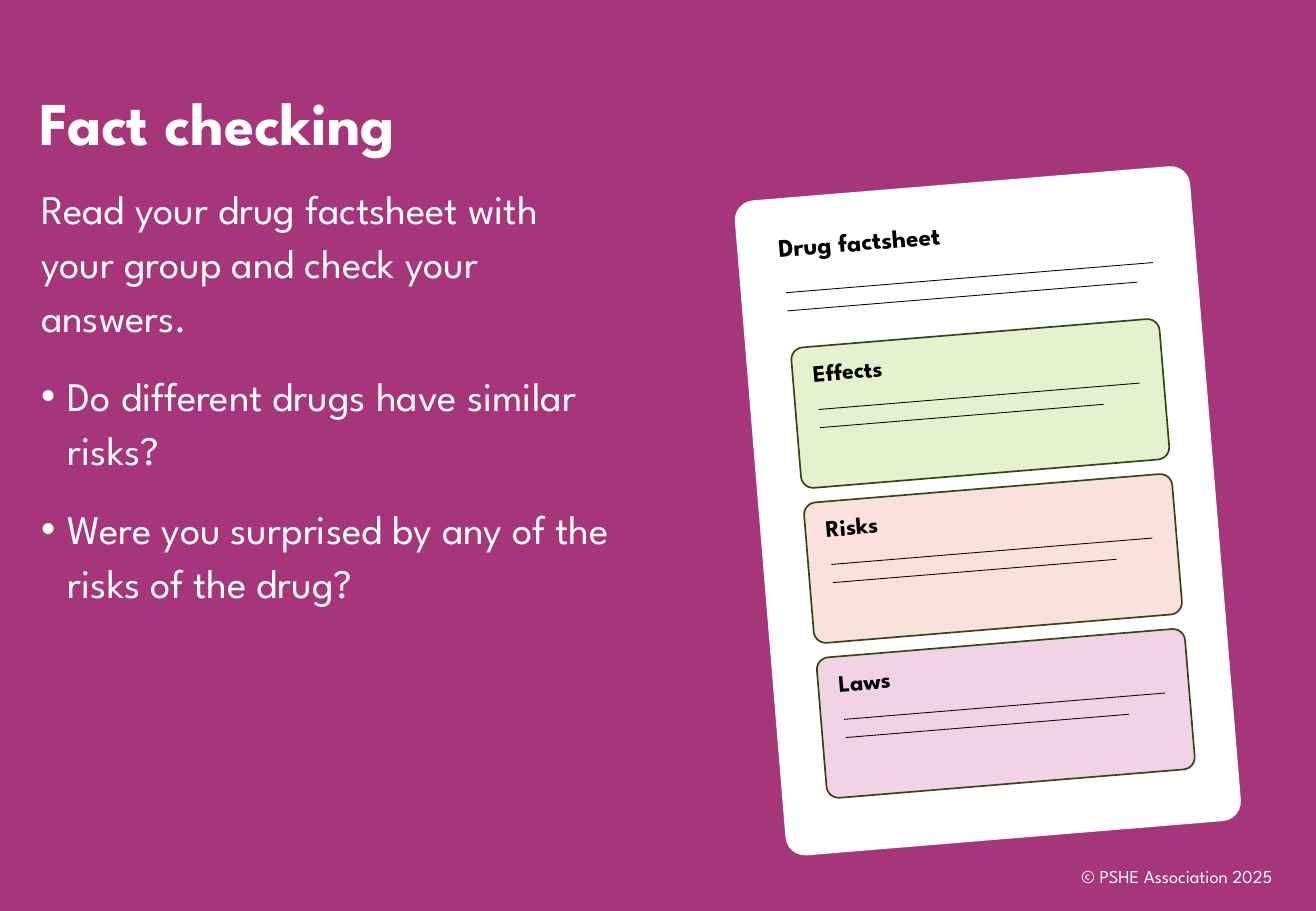
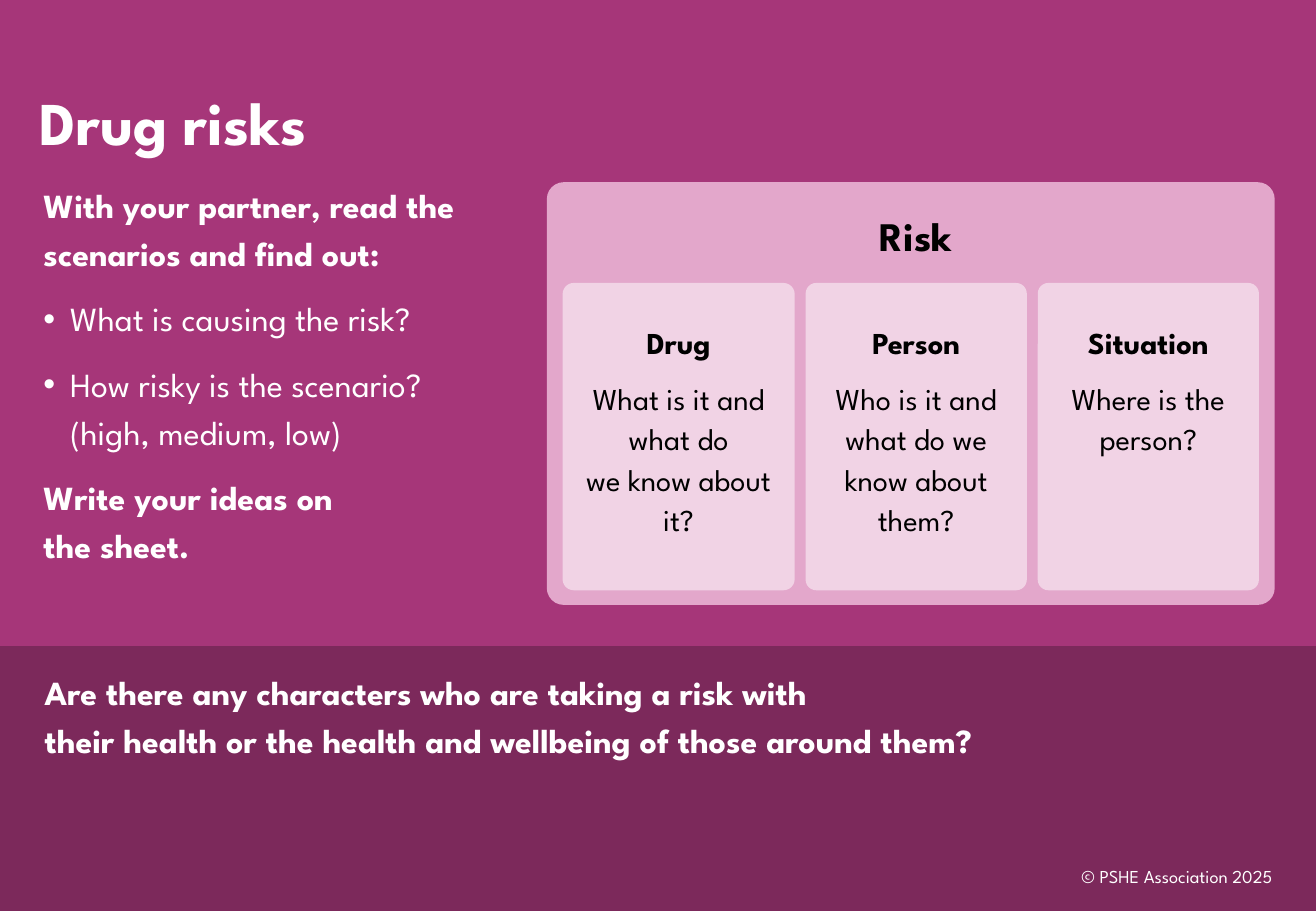
import math

import pptx
import pptx.dml.color
import pptx.enum.shapes
import pptx.enum.text
import pptx.util
from lxml import etree
from pptx.oxml.ns import qn

Inches = pptx.util.Inches
Pt = pptx.util.Pt
ALIGN = pptx.enum.text.PP_ALIGN
ANCHOR = pptx.enum.text.MSO_ANCHOR
SHAPE = pptx.enum.shapes.MSO_SHAPE

FONT = "League Spartan"
COLOURS = {
    "background": "A63679",
    "band": "7C295B",
    "panel": "E3A7CB",
    "pink": "F1D3E5",
    "green": "E7F1CF",
    "peach": "FBE1DB",
    "outline": "354413",
    "white": "FFFFFF",
    "black": "000000",
}
SLIDE_WIDTH, SLIDE_HEIGHT = 10.83, 7.5
SHEET_TILT = -4.7
BULLET_INDENT = 0.22


def colour(name):
    return pptx.dml.color.RGBColor.from_string(COLOURS[name])


def write(frame, text, *, size, color="white", bold=False, align=ALIGN.LEFT,
          line=None, before=0, bullet=False):
    """Add one paragraph; the first one fills the paragraph the frame starts with."""
    first = not frame.text
    paragraph = frame.paragraphs[0] if first else frame.add_paragraph()
    paragraph.text = text
    paragraph.alignment = align
    if bullet:
        properties = paragraph._p.get_or_add_pPr()
        properties.set("marL", str(Inches(BULLET_INDENT)))
        properties.set("indent", str(-Inches(BULLET_INDENT)))
        etree.SubElement(properties, qn("a:buFont")).set("typeface", "Arial")
        etree.SubElement(properties, qn("a:buChar")).set("char", "•")
    if line:
        paragraph.line_spacing = Pt(line)
    if before and not first:
        paragraph.space_before = Pt(before)
    for run in paragraph.runs:
        run.font.name = FONT
        run.font.size = Pt(size)
        run.font.bold = bold
        run.font.color.rgb = colour(color)


def set_frame(shape, anchor=ANCHOR.TOP, insets=(0.1, 0.05, 0.1, 0.05)):
    frame = shape.text_frame
    frame.word_wrap = True
    frame.vertical_anchor = anchor
    (frame.margin_left, frame.margin_top,
     frame.margin_right, frame.margin_bottom) = map(Inches, insets)
    return frame


def add_text_box(shapes, left, top, width, height, anchor=ANCHOR.TOP):
    return shapes.add_textbox(*map(Inches, (left, top, width, height))), anchor


def text_frame(shapes, box, anchor=ANCHOR.TOP):
    """Add a text box and return its frame."""
    return set_frame(shapes.add_textbox(*map(Inches, box)), anchor)


def add_box(shapes, box, fill, *, corner=None, outline=None):
    """Add a filled rectangle, rounded when a corner ratio is given."""
    preset = SHAPE.RECTANGLE if corner is None else SHAPE.ROUNDED_RECTANGLE
    shape = shapes.add_shape(preset, *map(Inches, box))
    shape.shadow.inherit = False
    if corner is not None:
        shape.adjustments[0] = corner
    shape.fill.solid()
    shape.fill.fore_color.rgb = colour(fill)
    if outline:
        shape.line.color.rgb = colour(outline)
        shape.line.width = Pt(1)
    else:
        shape.line.fill.background()
    return shape


def start_slide(presentation):
    slide = presentation.slides.add_slide(presentation.slide_layouts[6])
    slide.background.fill.solid()
    slide.background.fill.fore_color.rgb = colour("background")
    return slide


def add_title_and_footer(slide, title):
    frame = text_frame(slide.shapes, (0.23, 0.59, 5.34, 0.76), ANCHOR.BOTTOM)
    write(frame, title, size=36, bold=True, line=43)
    footer = text_frame(slide.shapes, (8.13, 7.01, 2.44, 0.4), ANCHOR.MIDDLE)
    write(footer, "© PSHE Association 2025", size=10.8, align=ALIGN.RIGHT)


class TiltedSheet:
    """Places parts by their untilted position on a sheet turned about its centre."""

    def __init__(self, shapes, box):
        self.shapes = shapes
        self.left, self.top, self.width, self.height = box

    def turn(self, x, y):
        angle = math.radians(SHEET_TILT)
        across, down = x - self.width / 2, y - self.height / 2
        return (self.left + self.width / 2 + across * math.cos(angle) - down * math.sin(angle),
                self.top + self.height / 2 + across * math.sin(angle) + down * math.cos(angle))

    def turned_box(self, x, y, width, height):
        centre_x, centre_y = self.turn(x + width / 2, y + height / 2)
        return centre_x - width / 2, centre_y - height / 2, width, height

    def add_card(self, x, y, width, height, fill, **style):
        shape = add_box(self.shapes, self.turned_box(x, y, width, height), fill, **style)
        shape.rotation = SHEET_TILT
        return shape

    def add_label(self, x, y, text, size):
        box = self.turned_box(x, y, 2.77, 0.36)
        shape = self.shapes.add_textbox(*map(Inches, box))
        shape.rotation = SHEET_TILT
        write(set_frame(shape), text, size=size, color="black", bold=True)

    def add_rules(self, x, y, lengths):
        for row, length in enumerate(lengths):
            height = y + row * 0.15
            ends = self.turn(x, height) + self.turn(x + length, height)
            rule = self.shapes.add_connector(
                pptx.enum.shapes.MSO_CONNECTOR.STRAIGHT, *map(Inches, ends))
            rule.line.color.rgb = colour("black")
            rule.line.width = Pt(0.5)
            etree.SubElement(rule._element.spPr, qn("a:effectLst"))


def add_factsheet(slide, box):
    sheet = TiltedSheet(slide.shapes.add_group_shape().shapes, box)
    sheet.add_card(0, 0, sheet.width, sheet.height, "white", corner=0.043)
    sheet.add_label(0.24, 0.23, "Drug factsheet", 15)
    sheet.add_rules(0.37, 0.78, (3.03, 2.89))
    sections = (("Effects", "green"), ("Risks", "peach"), ("Laws", "pink"))
    for index, (heading, fill) in enumerate(sections):
        left, top = 0.37, 1.24 + index * 1.28
        sheet.add_card(left, top, 3.04, 1.16, fill, corner=0.086, outline="outline")
        sheet.add_label(left + 0.07, top + 0.05, heading, 14)
        sheet.add_rules(left + 0.19, top + 0.52, (2.65, 2.34))


def add_risk_panel(slide, box):
    left, top, width, height = box
    add_box(slide.shapes, box, "panel", corner=0.04)
    heading = text_frame(slide.shapes, (left, top + 0.19, width + 0.09, 0.5))
    write(heading, "Risk", size=24, color="black", bold=True, align=ALIGN.CENTER)
    cards = (
        (1.91, "Drug", "What is it and what do\nwe know about it?"),
        (1.82, "Person", "Who is it and\nwhat do we know about them?"),
        (1.82, "Situation", "Where is the person?"),
    )
    card_left, gap = left + 0.13, 0.09
    for card_width, name, question in cards:
        card = add_box(slide.shapes, (card_left, top + 0.83, card_width, height - 0.95),
                       "pink", corner=0.048)
        frame = set_frame(card, insets=(0.12, 0.28, 0.12, 0.05))
        for text, bold in ((name, True), (question, False)):
            write(frame, text, size=18, color="black", bold=bold,
                  align=ALIGN.CENTER, line=24, before=9)
        card_left += card_width + gap


def add_question_band(slide, top):
    add_box(slide.shapes, (0, top, SLIDE_WIDTH, SLIDE_HEIGHT - top), "band")
    frame = text_frame(slide.shapes, (0.27, top + 0.11, 9, 0.9))
    write(frame, "Are there any characters who are taking a risk with\n"
          "their health or the health and wellbeing of those around them?",
          size=20, bold=True, line=28)


def build_fact_checking(presentation):
    slide = start_slide(presentation)
    add_title_and_footer(slide, "Fact checking")
    frame = text_frame(slide.shapes, (0.24, 1.42, 4.88, 4.78))
    for text, bullet in (
        ("Read your drug factsheet with your group and check your answers.", False),
        ("Do different drugs have similar risks?", True),
        ("Were you surprised by any of the risks of the drug?", True),
    ):
        write(frame, text, size=24, line=32, before=15, bullet=bullet)
    add_factsheet(slide, (6.25, 1.5, 3.76, 5.41))


def build_drug_risks(presentation):
    slide = start_slide(presentation)
    add_question_band(slide, 5.32)
    add_title_and_footer(slide, "Drug risks")
    frame = text_frame(slide.shapes, (0.26, 1.42, 3.87, 3.8))
    for text, bullet in (
        ("With your partner, read the scenarios and find out:", False),
        ("What is causing the risk?", True),
        ("How risky is the scenario? (high, medium, low)", True),
        ("Write your ideas on\nthe sheet.", False),
    ):
        write(frame, text, size=20, bold=not bullet, line=28, before=11, bullet=bullet)
    add_risk_panel(slide, (4.5, 1.5, 5.99, 3.48))


def main():
    presentation = pptx.Presentation()
    presentation.slide_width = Inches(SLIDE_WIDTH)
    presentation.slide_height = Inches(SLIDE_HEIGHT)
    build_fact_checking(presentation)
    build_drug_risks(presentation)
    presentation.save("out.pptx")


if __name__ == "__main__":
    main()
